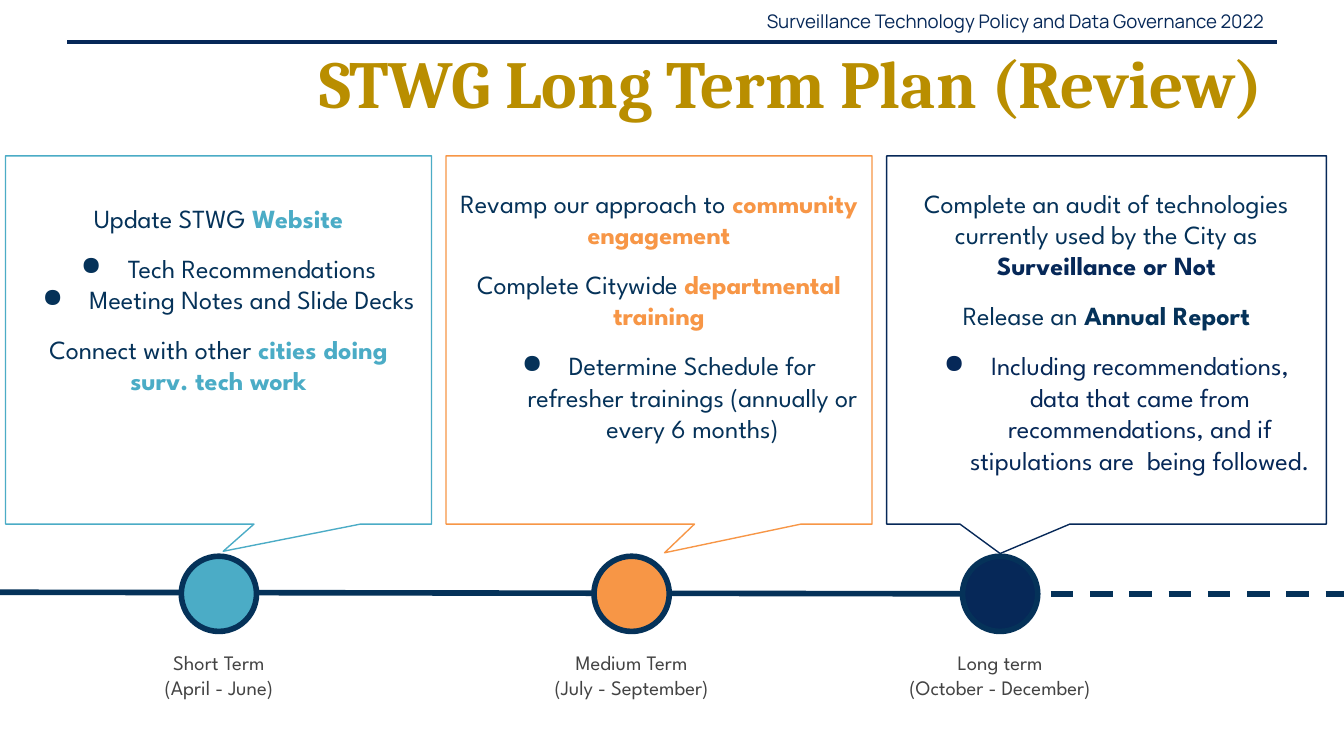
from dataclasses import dataclass
from typing import Any

from lxml import etree
from pptx import Presentation
from pptx.dml.color import RGBColor
from pptx.enum import dml, shapes, text
from pptx.oxml.ns import qn
from pptx.util import Pt


@dataclass(frozen=True)
class Theme:
    navy: str = "062858"
    ink: str = "053259"
    teal: str = "4BACC6"
    orange: str = "F79646"
    gold: str = "B98E00"
    grey: str = "434343"
    title_font: str = "Cambria"
    header_font: str = "Manrope"
    body_font: str = "League Spartan"
    title: float = 36
    body: float = 14
    label: float = 11
    header: float = 10


T = Theme()


@dataclass(frozen=True)
class Run:
    text: str
    color: str = T.ink
    bold: bool = False


@dataclass(frozen=True)
class Para:
    runs: tuple[Run, ...]
    before: float = 0
    bullet: str | None = None


@dataclass(frozen=True)
class Phase:
    color: str
    left: float
    width: float
    tail: tuple[float, float]
    text_top: float
    text_height: float
    center: float
    label_width: float
    label: tuple[str, str]
    paras: tuple[Para, ...]


CARD_TOP, CARD_HEIGHT = 83.5, 197.3
DOT_TOP, DOT_SIZE = 298, 40.3
LABEL_TOP, LABEL_HEIGHT = 341.3, 41
GAP = 10

PHASES = (
    Phase(T.teal, 3, 228.2, (0.011, 0.574), 101, 163.4, 117.3, 93,
          ("Short Term", "(April - June)"), (
              Para((Run("Update STWG "), Run("Website", T.teal, True))),
              Para((Run("Tech Recommendations"),), GAP, T.ink),
              Para((Run("Meeting Notes and Slide Decks"),), 0, T.ink),
              Para((Run("Connect with other "),
                    Run("cities doing surv. tech work", T.teal, True)), GAP))),
    Phase(T.orange, 239, 228.2, (0.013, 0.578), 93, 153.4, 338.4, 106.5,
          ("Medium Term", "(July - September)"), (
              Para((Run("Revamp our approach to "),
                    Run("community engagement", T.orange, True))),
              Para((Run("Complete Citywide "),
                    Run("departmental training", T.orange, True)), GAP),
              Para((Run("Determine Schedule for refresher trainings "
                        "(annually or every 6 months)"),), GAP, T.ink))),
    Phase(T.navy, 475, 235.6, (-0.242, 0.58), 93, 187.2, 535.8, 123,
          ("Long term", "(October - December)"), (
              Para((Run("Complete an audit of technologies currently used by the City as"),
                    Run(" Surveillance or Not", T.navy, True))),
              Para((Run("Release an "), Run("Annual Report", T.ink, True)), GAP),
              Para((Run("Including recommendations, data that came from recommendations, "
                        "and if stipulations are  being followed.", T.navy),),
                   GAP, T.navy))),
)


def rgb(color: str) -> RGBColor:
    return RGBColor.from_string(color)


def add_bullet(p: Any, color: str) -> None:
    pPr = p._p.get_or_add_pPr()
    pPr.set("marL", str(Pt(36)))
    pPr.set("indent", str(-Pt(25.2)))
    clr = etree.SubElement(pPr, qn("a:buClr"))
    etree.SubElement(clr, qn("a:srgbClr"), val=color)
    etree.SubElement(pPr, qn("a:buChar"), char="●")


def write(tf: Any, paras: tuple[Para, ...], *, font: str, size: float,
          align: Any = text.PP_ALIGN.CENTER, anchor: Any = text.MSO_ANCHOR.TOP,
          inset: float = 7.2, fit: Any = text.MSO_AUTO_SIZE.SHAPE_TO_FIT_TEXT) -> None:
    """Fill a text frame; inset is the top and bottom margin."""
    tf.word_wrap = True
    tf.auto_size = fit
    tf.vertical_anchor = anchor
    tf.margin_left = tf.margin_right = Pt(7.2)
    tf.margin_top = tf.margin_bottom = Pt(inset)
    for i, para in enumerate(paras):
        p = tf.add_paragraph() if i else tf.paragraphs[0]
        p.alignment = align
        p.space_before = Pt(para.before)
        if para.bullet:
            add_bullet(p, para.bullet)
        for run in para.runs:
            r = p.add_run()
            r.text = run.text
            r.font.name, r.font.size, r.font.bold = font, Pt(size), run.bold
            r.font.color.rgb = rgb(run.color)


def add_box(s: Any, left: float, top: float, width: float, height: float) -> Any:
    return s.shapes.add_textbox(Pt(left), Pt(top), Pt(width), Pt(height)).text_frame


def add_line(s: Any, x1: float, y1: float, x2: float, y2: float,
             color: str, width: float, dashed: bool = False) -> None:
    line = s.shapes.add_connector(shapes.MSO_CONNECTOR.STRAIGHT,
                                  Pt(x1), Pt(y1), Pt(x2), Pt(y2))
    line.line.color.rgb = rgb(color)
    line.line.width = Pt(width)
    if dashed:
        line.line.dash_style = dml.MSO_LINE.DASH
    etree.SubElement(line._element.spPr, qn("a:effectLst"))


def add_outlined(s: Any, kind: Any, left: float, top: float, width: float, height: float,
                 line: str, weight: float, fill: str | None = None) -> Any:
    sp = s.shapes.add_shape(kind, Pt(left), Pt(top), Pt(width), Pt(height))
    sp.shadow.inherit = False
    sp.line.color.rgb = rgb(line)
    sp.line.width = Pt(weight)
    if fill:
        sp.fill.solid()
        sp.fill.fore_color.rgb = rgb(fill)
    else:
        sp.fill.background()
    return sp


def add_callout(s: Any, phase: Phase) -> None:
    sp = add_outlined(s, shapes.MSO_SHAPE.RECTANGULAR_CALLOUT, phase.left, CARD_TOP,
                      phase.width, CARD_HEIGHT, phase.color, 0.75)
    sp.adjustments[0], sp.adjustments[1] = phase.tail


def add_milestone(s: Any, phase: Phase) -> None:
    """Draw a phase's dot, its date label and the text of its callout."""
    add_outlined(s, shapes.MSO_SHAPE.OVAL, phase.center - DOT_SIZE / 2, DOT_TOP,
                 DOT_SIZE, DOT_SIZE, T.ink, 3, phase.color)
    label = add_box(s, phase.center - phase.label_width / 2, LABEL_TOP,
                    phase.label_width, LABEL_HEIGHT)
    write(label, tuple(Para((Run(line, T.grey),)) for line in phase.label),
          font=T.body_font, size=T.label)
    body = add_box(s, phase.left, phase.text_top, phase.width, phase.text_height)
    write(body, phase.paras, font=T.body_font, size=T.body)


def add_heading(s: Any) -> None:
    style = dict(align=text.PP_ALIGN.RIGHT, anchor=text.MSO_ANCHOR.MIDDLE,
                 inset=3.6, fit=text.MSO_AUTO_SIZE.NONE)
    add_line(s, 36, 22.5, 684, 22.5, T.navy, 2.25)
    write(add_box(s, 375, 0.7, 309, 21.6),
          (Para((Run("Surveillance Technology Policy and Data Governance 2022", T.navy),)),),
          font=T.header_font, size=T.header, **style)
    title = s.shapes.title
    title.left, title.top, title.width, title.height = Pt(18), Pt(21), Pt(666), Pt(46)
    write(title.text_frame, (Para((Run("STWG Long Term Plan (Review)", T.gold, True),)),),
          font=T.title_font, size=T.title, **style)


def main() -> None:
    prs = Presentation()
    prs.slide_width, prs.slide_height = Pt(720), Pt(405)
    s = prs.slides.add_slide(prs.slide_layouts[5])
    add_heading(s)
    for phase in PHASES:
        add_callout(s, phase)
    add_line(s, 563, 318.2, 720.7, 318.2, T.ink, 3, dashed=True)
    add_line(s, -0.7, 317.3, 556, 318.2, T.ink, 3)
    for phase in PHASES:
        add_milestone(s, phase)
    prs.save("out.pptx")


if __name__ == "__main__":
    main()
